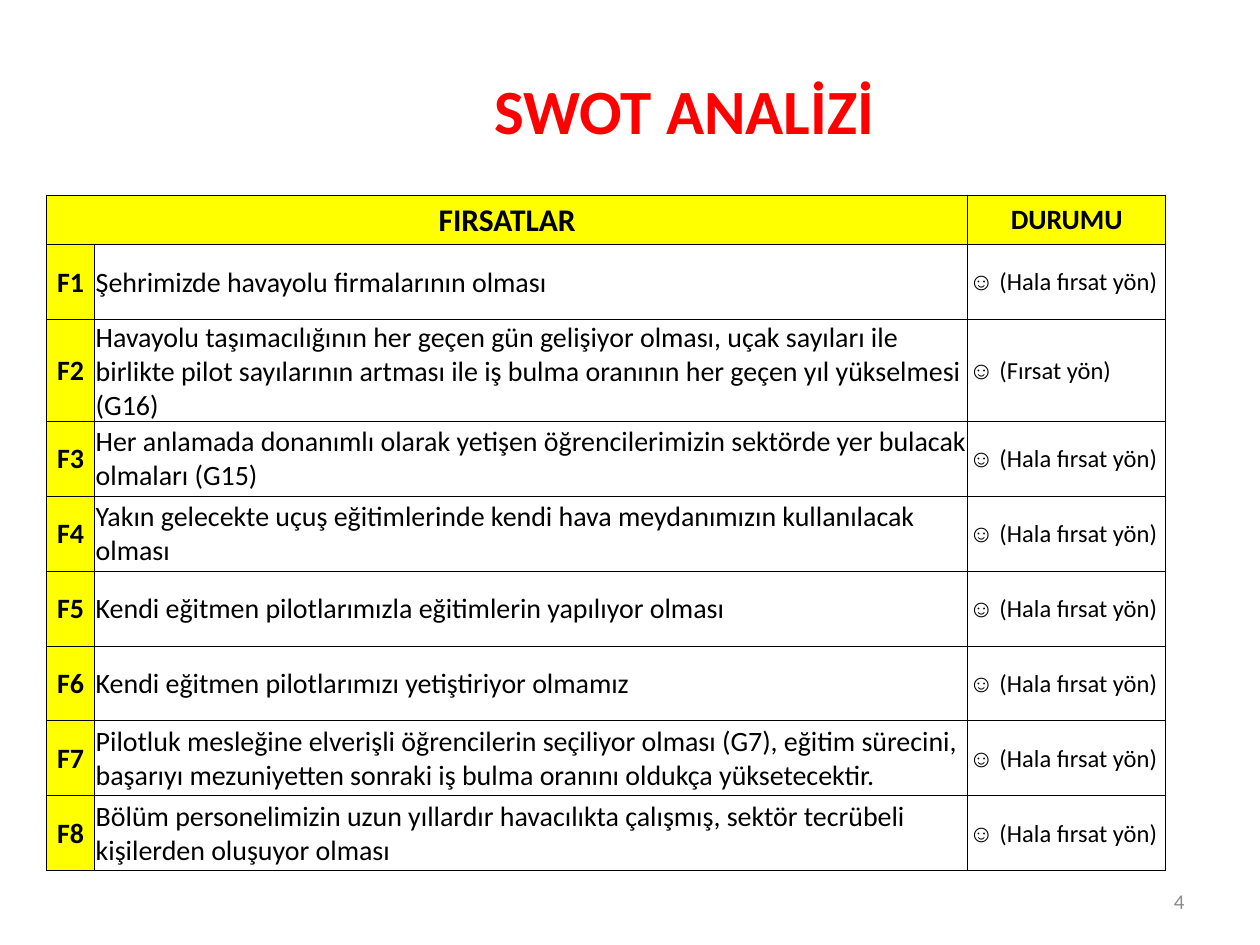
from lxml import etree
from pptx import Presentation
from pptx.dml.color import RGBColor
from pptx.enum.text import MSO_ANCHOR, PP_ALIGN
from pptx.oxml.ns import qn
from pptx.util import Cm, Pt

LEFT, CENTER, RIGHT = PP_ALIGN.LEFT, PP_ALIGN.CENTER, PP_ALIGN.RIGHT
TOP, MIDDLE = MSO_ANCHOR.TOP, MSO_ANCHOR.MIDDLE
BLACK = RGBColor(0x00, 0x00, 0x00)
WHITE = RGBColor(0xFF, 0xFF, 0xFF)
RED = RGBColor(0xFF, 0x00, 0x00)
YELLOW = RGBColor(0xFF, 0xFF, 0x00)
GRAY = RGBColor(0x8C, 0x8C, 0x8C)

STILL_OPPORTUNITY = " (Hala fırsat yön)"
OPPORTUNITIES = [
    ("Şehrimizde havayolu firmalarının olması", STILL_OPPORTUNITY),
    ("Havayolu taşımacılığının her geçen gün gelişiyor olması, uçak sayıları ile "
     "birlikte pilot sayılarının artması ile iş bulma oranının her geçen yıl "
     "yükselmesi (G16)", " (Fırsat yön)"),
    ("Her anlamada donanımlı olarak yetişen öğrencilerimizin sektörde yer bulacak "
     "olmaları (G15)", STILL_OPPORTUNITY),
    ("Yakın gelecekte uçuş eğitimlerinde kendi hava meydanımızın kullanılacak olması",
     STILL_OPPORTUNITY),
    ("Kendi eğitmen pilotlarımızla eğitimlerin yapılıyor olması", STILL_OPPORTUNITY),
    ("Kendi eğitmen pilotlarımızı yetiştiriyor olmamız", STILL_OPPORTUNITY),
    ("Pilotluk mesleğine elverişli öğrencilerin seçiliyor olması (G7), eğitim "
     "sürecini, başarıyı mezuniyetten sonraki iş bulma oranını oldukça "
     "yüksetecektir.", STILL_OPPORTUNITY),
    ("Bölüm personelimizin uzun yıllardır havacılıkta çalışmış, sektör tecrübeli "
     "kişilerden oluşuyor olması", STILL_OPPORTUNITY),
]


def write(frame, align, color, *spans):
    """Fill the first paragraph with (text, size, bold, font name) spans."""
    para = frame.paragraphs[0]
    para.alignment = align
    for text, size, bold, font_name in spans:
        span = para.add_run()
        span.text = text
        span.font.color.rgb = color
        for key, value in {"size": Pt(size), "bold": bold, "name": font_name}.items():
            setattr(span.font, key, value)


def style_cell(cell, fill_color):
    """Set margins, thin black borders and fill; borders must precede the fill."""
    margin = Cm(0.02)
    layout = {"margin_left": margin, "margin_right": margin, "margin_top": margin,
              "margin_bottom": 0, "vertical_anchor": MIDDLE}
    for key, value in layout.items():
        setattr(cell, key, value)
    properties = cell._tc.get_or_add_tcPr()
    for side in ("a:lnL", "a:lnR", "a:lnT", "a:lnB"):
        line = etree.SubElement(properties, qn(side), w=str(Pt(0.5)))
        line_fill = etree.SubElement(line, qn("a:solidFill"))
        etree.SubElement(line_fill, qn("a:srgbClr"), val=str(BLACK))
    cell.fill.solid()
    cell.fill.fore_color.rgb = fill_color


deck = Presentation()
deck.slide_width, deck.slide_height = Cm(25.4), Cm(19.05)
page = deck.slides.add_slide(deck.slide_layouts[6])

# Page number and title
for place, anchor, align, color, span in [
    ((18.21, 17.65, 5.92, 1.02), MIDDLE, RIGHT, GRAY, ("4", 12, False, "Calibri")),
    ((4.09, 1.32, 19.41, 1.8), TOP, CENTER, RED, ("SWOT ANALİZİ", 36, True, "Calibri")),
]:
    box = page.shapes.add_textbox(*map(Cm, place))
    box.text_frame.word_wrap = True
    box.text_frame.vertical_anchor = anchor
    write(box.text_frame, align, color, span)

# Opportunities table
column_widths = [0.97, 17.6, 3.99]
row_heights = [1] + [1.51] * len(OPPORTUNITIES)
table = page.shapes.add_table(
    len(row_heights), len(column_widths), Cm(0.94), Cm(3.93),
    Cm(sum(column_widths)), Cm(sum(row_heights))).table
for column, width in zip(table.columns, column_widths):
    column.width = Cm(width)
for row, height in zip(table.rows, row_heights):
    row.height = Cm(height)

for row_index in range(len(row_heights)):
    for column_index in range(len(column_widths)):
        is_heading = row_index == 0 or column_index == 0
        style_cell(table.cell(row_index, column_index), YELLOW if is_heading else WHITE)

table.cell(0, 0).merge(table.cell(0, 1))
write(table.cell(0, 0).text_frame, CENTER, BLACK, ("FIRSATLAR", 18, True, "Calibri"))
write(table.cell(0, 2).text_frame, CENTER, BLACK, ("DURUMU", 16, True, "Calibri"))

for number, (opportunity, status) in enumerate(OPPORTUNITIES, start=1):
    code_cell, text_cell, status_cell = table.rows[number].cells
    write(code_cell.text_frame, CENTER, BLACK, (f"F{number}", 16, True, "Calibri"))
    write(text_cell.text_frame, LEFT, BLACK, (opportunity, 16, False, "Calibri"))
    write(status_cell.text_frame, LEFT, BLACK,
          ("☺", 14, False, "Arial"), (status, 14, False, "Calibri"))

deck.save("out.pptx")
